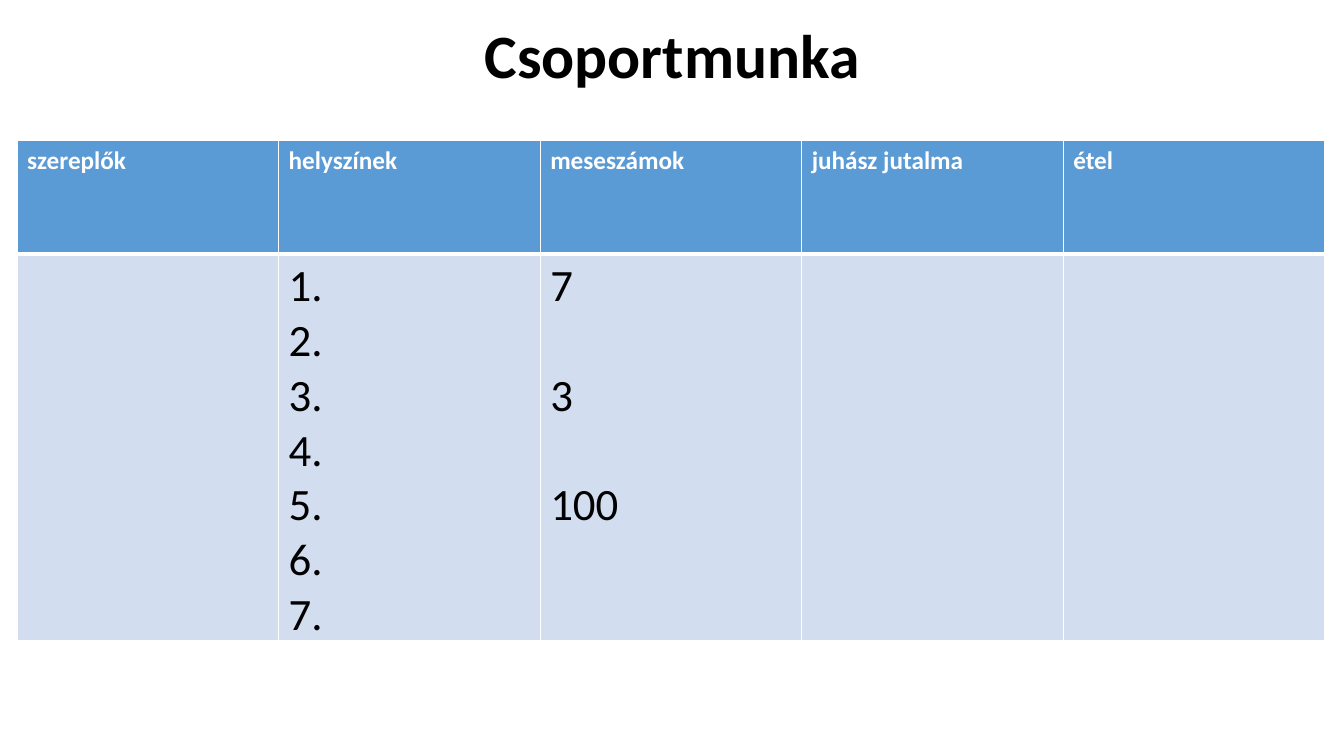
from lxml import etree
from pptx import Presentation
from pptx.dml.color import RGBColor
from pptx.enum import text
from pptx.oxml.ns import qn
from pptx.util import Inches, Pt

TITLE = "Csoportmunka"
COLUMNS = [
    ("szereplők", []),
    ("helyszínek", [f"{n}." for n in range(1, 8)]),
    ("meseszámok", ["7", "3", "100"]),
    ("juhász jutalma", []),
    ("étel", []),
]
LINE_GAPS = {"meseszámok": 39}  # points: one empty line between the numbers
COLORS = {"black": "000000", "white": "FFFFFF", "header": "5B9BD5", "body": "D2DEEF"}
FONT = "Calibri"
COL_WIDTH, ROW_HEIGHTS = 2.594, (1.13, 3.83)


def rgb(name):
    return RGBColor.from_string(COLORS[name])


def style(p, size, color, bold):
    f = p.font
    f.name, f.size, f.bold = FONT, Pt(size), bold
    f.color.rgb = rgb(color)


def add_borders(cell, bottom):
    """White lines on all four sides; the bottom width is given in points."""
    tc_pr = cell._tc.get_or_add_tcPr()
    for i, (side, width) in enumerate(zip("LRTB", (1, 1, 1, bottom))):
        ln = etree.Element(qn(f"a:ln{side}"), w=str(Pt(width)))
        fill = etree.SubElement(ln, qn("a:solidFill"))
        etree.SubElement(fill, qn("a:srgbClr"), val=COLORS["white"])
        tc_pr.insert(i, ln)


def fill_cell(cell, lines, fill, size, color, bold, bottom=1, gap=0):
    cell.fill.solid()
    cell.fill.fore_color.rgb = rgb(fill)
    add_borders(cell, bottom)
    tf = cell.text_frame
    tf.text = "\n".join(lines)
    for i, p in enumerate(tf.paragraphs):
        style(p, size, color, bold)
        if i and gap:
            p.space_before = Pt(gap)


prs = Presentation()
prs.slide_width, prs.slide_height = Inches(13.33), Inches(7.5)
s = prs.slides.add_slide(prs.slide_layouts[6])

tf = s.shapes.add_textbox(Inches(0.92), Inches(0.12), Inches(11.5), Inches(0.93)).text_frame
tf.word_wrap = True
tf.vertical_anchor = text.MSO_ANCHOR.MIDDLE
p = tf.paragraphs[0]
p.text = TITLE
p.alignment = text.PP_ALIGN.CENTER
p.line_spacing = 0.9
style(p, 44, "black", True)

table = s.shapes.add_table(
    len(ROW_HEIGHTS), len(COLUMNS), Inches(0.17), Inches(1.39),
    Inches(COL_WIDTH * len(COLUMNS)), Inches(sum(ROW_HEIGHTS))).table
for row, height in zip(table.rows, ROW_HEIGHTS):
    row.height = Inches(height)
for c, (heading, lines) in enumerate(COLUMNS):
    table.columns[c].width = Inches(COL_WIDTH)
    fill_cell(table.cell(0, c), [heading], "header", 18, "white", True, bottom=3)
    fill_cell(table.cell(1, c), lines, "body", 32, "black", False,
              gap=LINE_GAPS.get(heading, 0))
    # The shared edge under the header keeps the header's width
    tc_pr = table.cell(1, c)._tc.tcPr
    tc_pr.find(qn("a:lnT")).set("w", str(Pt(3)))

prs.save("out.pptx")
